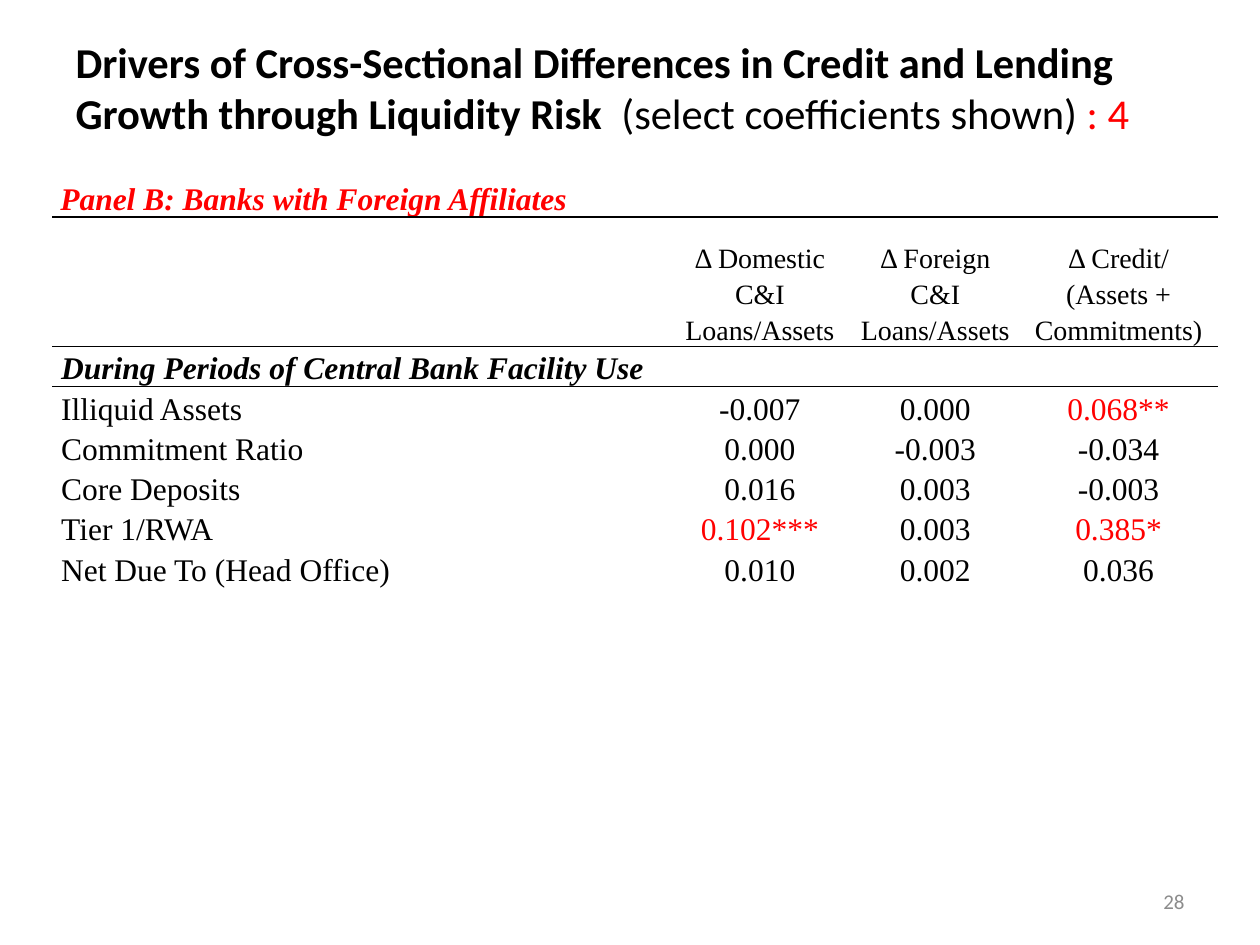
from dataclasses import dataclass

from lxml import etree
from pptx import Presentation
from pptx.dml.color import RGBColor
from pptx.enum import text as t
from pptx.oxml.ns import qn
from pptx.util import Pt


@dataclass(frozen=True)
class Theme:
    ink: RGBColor = RGBColor(0, 0, 0)
    accent: RGBColor = RGBColor(0xFF, 0, 0)
    muted: RGBColor = RGBColor(0x8C, 0x8C, 0x8C)
    sans: str = "Calibri"
    serif: str = "Times New Roman"
    title_size: float = 24.3
    body_size: float = 18
    header_size: float = 16
    number_size: float = 12


@dataclass(frozen=True)
class TableRow:
    labels: tuple[str, ...]
    height: float = 23
    size: float = Theme.body_size
    margin: float = 5
    heading: bool = False
    red: bool = False
    rules: tuple[str, ...] = ()


THEME = Theme()
NO_STYLE = "{2D5ABB26-0587-4C30-8999-92F81FD0307C}"
COLUMN_WIDTHS = (352, 104.5, 96, 113.5)
ROWS = (
    TableRow(("Panel B: Banks with Foreign Affiliates", "", "", ""), height=34,
             margin=4.5, heading=True, red=True, rules=("a:lnB",)),
    TableRow(("", "Δ Domestic C&I Loans/Assets", "Δ Foreign C&I Loans/Assets",
              "Δ Credit/ (Assets + Commitments)"), height=74,
             size=THEME.header_size, margin=4.5, rules=("a:lnT", "a:lnB")),
    TableRow(("During Periods of Central Bank Facility Use", "", "", ""),
             heading=True, rules=("a:lnT",)),
    TableRow(("Illiquid Assets", "-0.007", "0.000", "0.068**")),
    TableRow(("Commitment Ratio", "0.000", "-0.003", "-0.034")),
    TableRow(("Core Deposits", "0.016", "0.003", "-0.003")),
    TableRow(("Tier 1/RWA", "0.102***", "0.003", "0.385*")),
    TableRow(("Net Due To (Head Office)", "0.010", "0.002", "0.036")),
)


def set_font(font, name: str, size: float, color: RGBColor) -> None:
    font.name, font.size = name, Pt(size)
    font.color.rgb = color


def add_rules(cell, sides: tuple[str, ...]) -> None:
    """Border lines must precede the fill in the cell properties."""
    properties = cell._tc.get_or_add_tcPr()
    for position, side in enumerate(sides):
        line = etree.Element(qn(side), w=str(Pt(1)))
        fill = etree.SubElement(line, qn("a:solidFill"))
        etree.SubElement(fill, qn("a:srgbClr"), val=str(THEME.ink))
        properties.insert(position, line)


def fill_cell(cell, label: str, row: TableRow, centred: bool) -> None:
    cell.fill.background()
    add_rules(cell, row.rules)
    cell.vertical_anchor = t.MSO_ANCHOR.BOTTOM
    cell.margin_left = cell.margin_right = Pt(row.margin)
    cell.margin_top = cell.margin_bottom = 0
    cell.text = label
    paragraph = cell.text_frame.paragraphs[0]
    paragraph.line_spacing = 1.15
    paragraph.alignment = t.PP_ALIGN.CENTER if centred else t.PP_ALIGN.LEFT
    color = THEME.accent if row.red or "*" in label else THEME.ink
    set_font(paragraph.font, THEME.serif, row.size, color)
    paragraph.font.bold = paragraph.font.italic = row.heading


def add_coefficients(slide) -> None:
    table = slide.shapes.add_table(
        len(ROWS), len(COLUMN_WIDTHS), Pt(30), Pt(90),
        Pt(sum(COLUMN_WIDTHS)), Pt(sum(row.height for row in ROWS))).table
    table.first_row = table.horz_banding = False
    table._tbl.tblPr.find(qn("a:tableStyleId")).text = NO_STYLE
    for column, width in zip(table.columns, COLUMN_WIDTHS):
        column.width = Pt(width)
    for index, row in enumerate(ROWS):
        table.rows[index].height = Pt(row.height)
        for column, label in enumerate(row.labels):
            fill_cell(table.cell(index, column), label, row, column > 0)


def add_title(slide) -> None:
    title = slide.shapes.title
    title.left, title.top, title.width, title.height = Pt(36), Pt(21.5), Pt(648), Pt(56)
    frame = title.text_frame
    frame.auto_size = t.MSO_AUTO_SIZE.NONE
    frame.vertical_anchor = t.MSO_ANCHOR.MIDDLE
    paragraph = frame.paragraphs[0]
    paragraph.alignment = t.PP_ALIGN.LEFT
    for words, bold, color in (
        ("Drivers of Cross-Sectional Differences in Credit and Lending "
         "Growth through Liquidity Risk  ", True, THEME.ink),
        ("(select coefficients shown) ", False, THEME.ink),
        (": 4", False, THEME.accent),
    ):
        run = paragraph.add_run()
        run.text = words
        set_font(run.font, THEME.sans, THEME.title_size, color)
        run.font.bold = bold


def add_page_number(slide) -> None:
    frame = slide.shapes.add_textbox(Pt(516), Pt(500.5), Pt(168), Pt(29)).text_frame
    frame.word_wrap = True
    frame.vertical_anchor = t.MSO_ANCHOR.MIDDLE
    paragraph = frame.paragraphs[0]
    paragraph.text = "28"
    paragraph.alignment = t.PP_ALIGN.RIGHT
    set_font(paragraph.font, THEME.sans, THEME.number_size, THEME.muted)


def main() -> None:
    deck = Presentation()
    deck.slide_width, deck.slide_height = Pt(720), Pt(540)
    slide = deck.slides.add_slide(deck.slide_layouts.get_by_name("Title Only"))
    add_coefficients(slide)
    add_title(slide)
    add_page_number(slide)
    deck.save("out.pptx")


if __name__ == "__main__":
    main()
